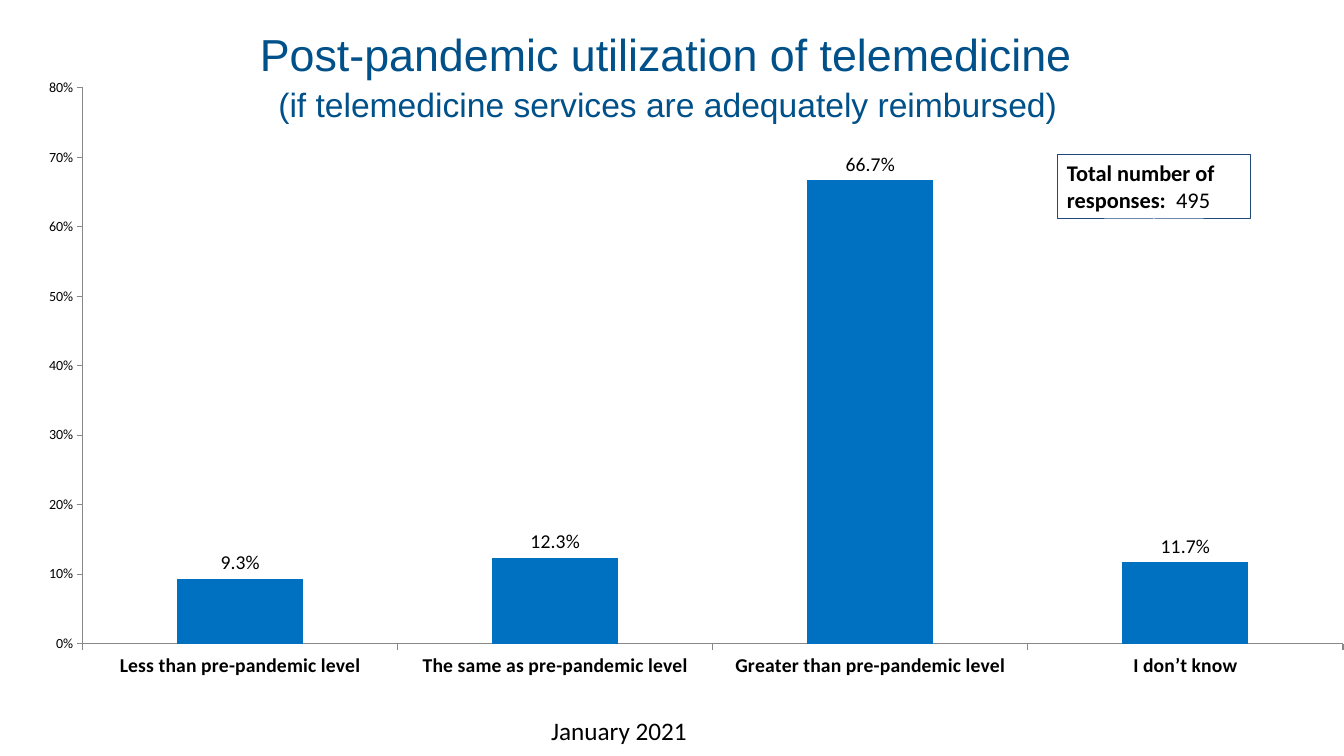
"""Builds a slide with a column chart on telemedicine use after the pandemic."""
from lxml import etree
from pptx import Presentation
from pptx import util as u
from pptx.chart.data import CategoryChartData
from pptx.dml.color import RGBColor
from pptx.enum import chart as charts, shapes, text


def color(value):
    return RGBColor.from_string(value)


def style(font, size, value="000000", bold=False, name="Calibri"):
    font.name = name
    font.size = u.Pt(size)
    font.bold = bold
    font.color.rgb = color(value)


deck = Presentation()
deck.slide_width, deck.slide_height = u.Cm(33.87), u.Cm(19.05)
page = deck.slides.add_slide(deck.slide_layouts[5])

title = page.shapes.title
title.left, title.top, title.width, title.height = u.Cm(2.34), u.Cm(0), u.Cm(29.21), u.Cm(3.68)
title.text_frame.vertical_anchor = text.MSO_ANCHOR.MIDDLE
para = title.text_frame.paragraphs[0]
para.alignment = text.PP_ALIGN.CENTER
para.line_spacing = 1.08
span = para.add_run()
span.text = "Post-pandemic utilization of telemedicine "
style(span.font, 32, "005089", name="Arial")
para.add_line_break()
span = para.add_run()
span.text = "(if telemedicine services are adequately reimbursed) "
style(span.font, 24, "005089", name="Arial")

data = CategoryChartData(number_format="0.0%")
data.categories = ["Less than pre-pandemic level", "The same as pre-pandemic level",
                   "Greater than pre-pandemic level", "I don’t know"]
data.add_series("Series 1", [0.093, 0.123, 0.667, 0.117])
chart = page.shapes.add_chart(charts.XL_CHART_TYPE.COLUMN_CLUSTERED, u.Cm(0.76), u.Cm(1.83),
                              u.Cm(33.12), u.Cm(15.49), data).chart
chart.has_title = False
chart.has_legend = False
style(chart.font, 10)

for axis, size, bold in [(chart.category_axis, 14, True), (chart.value_axis, 10, False)]:
    axis.has_major_gridlines = False
    axis.major_tick_mark = charts.XL_TICK_MARK.OUTSIDE
    axis.minor_tick_mark = charts.XL_TICK_MARK.NONE
    axis.format.line.color.rgb = color("888888")
    axis.format.line.width = u.Pt(0.75)
    style(axis.tick_labels.font, size, bold=bold)
scale = chart.value_axis
scale.minimum_scale, scale.maximum_scale, scale.major_unit = 0, 0.8, 0.1
scale.tick_labels.number_format = "0%"
scale.tick_labels.number_format_is_linked = False

plot = chart.plots[0]
plot.gap_width = 150
plot.vary_by_categories = False
bars = plot.series[0]
bars.format.fill.solid()
bars.format.fill.fore_color.rgb = color("0070C0")
labels = bars.data_labels
labels.show_value = True
labels.number_format = "0.0%"
labels.number_format_is_linked = False
labels.position = charts.XL_LABEL_POSITION.OUTSIDE_END
style(labels.font, 14)

namespace = "{http://schemas.openxmlformats.org/drawingml/2006/chart}"
area = chart.element.find(f".//{namespace}plotArea")
for old in area.findall(f"{namespace}layout"):
    area.remove(old)
layout = etree.Element(f"{namespace}layout")
manual = etree.SubElement(layout, f"{namespace}manualLayout")
for tag, value in [("layoutTarget", "inner"), ("xMode", "edge"), ("yMode", "edge"),
                   ("x", "0.04"), ("y", "0.025"), ("w", "0.959"), ("h", "0.904")]:
    etree.SubElement(manual, namespace + tag).set("val", value)
area.insert(0, layout)

total = page.shapes.add_shape(shapes.MSO_SHAPE.RECTANGLE, u.Cm(26.64), u.Cm(3.89),
                              u.Cm(4.88), u.Cm(1.63))
total.shadow.inherit = False
total.fill.background()
total.line.color.rgb = color("1F497D")
total.line.width = u.Pt(0.75)
total.text_frame.word_wrap = True
total.text_frame.vertical_anchor = text.MSO_ANCHOR.TOP
para = total.text_frame.paragraphs[0]
para.alignment = text.PP_ALIGN.LEFT
for words, bold in [("Total number of responses:  ", True), ("495", False)]:
    span = para.add_run()
    span.text = words
    style(span.font, 16, bold=bold)

date = page.shapes.add_textbox(u.Cm(13.64), u.Cm(17.91), u.Cm(10.72), u.Cm(1.02))
date.text_frame.word_wrap = True
span = date.text_frame.paragraphs[0].add_run()
span.text = "January 2021"
style(span.font, 18)

deck.save("out.pptx")
